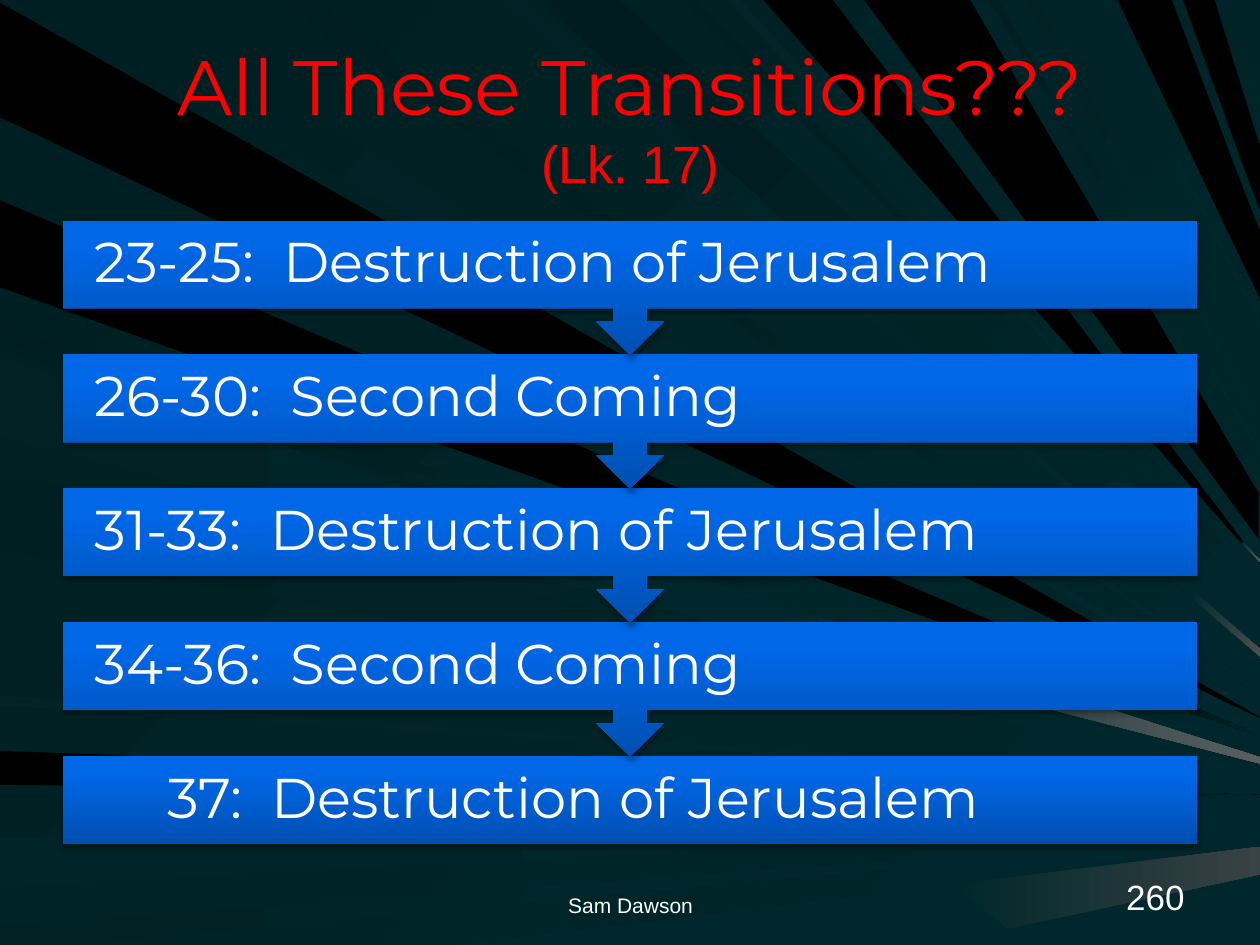
from lxml.etree import SubElement
from pptx import Presentation
from pptx.dml.color import RGBColor as Rgb
from pptx.enum.shapes import MSO_SHAPE as Preset
from pptx.enum.text import MSO_ANCHOR as Anchor, MSO_AUTO_SIZE as AutoSize, PP_ALIGN as Align
from pptx.oxml.ns import qn
from pptx.util import Inches, Pt

COLORS = {
    "black": "000000", "white": "FFFFFF", "red": "FF0000", "pink": "FF9999",
    "teal": "00272B", "teal1": "001C1F", "teal2": "001D1F", "teal3": "001D20",
    "teal4": "001E21", "teal5": "001F22", "teal6": "001F23", "teal7": "002023",
    "teal8": "002125", "teal9": "002225", "teal10": "002327", "teal11": "002427",
    "teal12": "002428", "grey1": "394244", "grey2": "4A5152", "grey3": "5A5F60",
    "navy": "004FB1", "blue": "0067E6",
}

# The grid has 100 columns and 100 rows to the inch.
COLUMNS, ROWS = 1000, 750
UNIT = Inches(1) // 100

# Background rays: colour or (first colour, last colour, angle), then corners on the grid
RAYS = [
    ("black", "556,317 0,2 0,93 529,345 1000,570 1000,569"),
    (("teal6", "teal", 45), "577,298 101,0 26,0 563,310 1000,563 1000,562"),
    ("black", "0,623 701,629 701,621 0,596"),
    (("black", "teal", 0), "1000,632 1000,631 701,621 701,629"),
    (("teal11", "teal", 0), "0,704 831,660 831,647 0,665"),
    ("teal", "1000,651 1000,643 831,647 831,660"),
    ("teal", "1000,662 628,689 628,697"),
    (("teal9", "teal", 0), "0,750 54,750 628,697 628,689 0,735"),
    ("teal", "742,750 801,737 756,702 364,750"),
    (("teal", "grey1", 0), "1000,694 1000,672 756,702 800,737"),
    ("teal", "1000,589 873,547 873,548"),
    (("teal4", "teal", 45), "0,270 873,548 873,547 0,258"),
    (("black", "teal", 0), "1000,585 1000,584 873,529 873,539"),
    ("black", "0,228 873,539 873,529 0,159"),
    (("teal8", "teal", 45), "398,0 944,473 947,469 416,0"),
    (("teal", "grey2", 45), "1000,521 1000,515 947,469 944,473"),
    ("teal", "1000,507 1000,479 968,449 951,465"),
    (("teal1", "teal", 45), "426,0 951,465 968,449 492,0"),
    ("pink", "1000,463 977,440"),
    (("teal3", "teal", 45), "540,0 977,440 552,0"),
    ("black", "606,0 985,431 987,430 661,0"),
    (("teal", "grey3", 45), "1000,446 1000,445 987,430 985,431"),
    ("black", "1000,237 1000,183 986,148 973,181"),
    ("black", "887,0 973,181 986,148 930,0"),
    ("black", "964,0 939,0 989,138 999,113"),
    ("black", "989,138 1000,167 1000,114 999,113"),
    (("teal7", "teal", 45), "0,342 999,602 999,596 0,278"),
    (("teal6", "teal", 45), "0,437 999,606 999,605 0,374"),
    (("teal12", "teal", 0), "0,560 999,623 999,621 0,552"),
    (("teal2", "teal", 45), "225,0 999,552 999,547 247,0"),
    (("teal12", "teal", 45), "577,0 999,454 999,453 588,0"),
    ("black", "770,0 686,0 999,428 999,390 998,390"),
    (("teal5", "teal", 45), "785,0 999,360 999,354 792,0"),
    (("teal9", "teal", 45), "815,0 999,336 999,335 824,0"),
    (("teal10", "teal", 45), "999,249 872,0 865,0 999,258"),
    (("teal9", "teal", 0), "0,283 0,347 633,511 635,498 637,485"),
    (("teal", "grey3", 0), "1000,601 637,485 635,498 633,511 1000,606"),
]

# Passage text and its left indent in columns
PASSAGES = [
    ("23-25:  Destruction of Jerusalem", 0),
    ("26-30:  Second Coming", 0),
    ("31-33:  Destruction of Jerusalem", 0),
    ("34-36:  Second Coming", 0),
    ("37:  Destruction of Jerusalem", 58),
]
PASSAGE_TOP, PASSAGE_STEP = 175, 106.25
BOX_HEIGHT, CALLOUT_HEIGHT = 70, 107


def grid(*lengths):
    return [round(length * UNIT) for length in lengths]


def color(name):
    return Rgb.from_string(COLORS[name])


def paint(fill, look, reach=1):
    """Fill with one colour, or with a clockwise-angled gradient ending at reach."""
    if isinstance(look, str):
        fill.solid()
        fill.fore_color.rgb = color(look)
        return
    first, last, angle = look
    fill.gradient()
    fill.gradient_angle = (360 - angle) % 360
    for stop, name, position in zip(fill.gradient_stops, (first, last), (0, reach)):
        stop.color.rgb = color(name)
        stop.position = position


def add_text(para, text, size=12, font="Arial", tint="white"):
    span = para.add_run()
    span.text = text
    span.font.size = Pt(size)
    span.font.name = font
    span.font.color.rgb = color(tint)


class SlideBuilder:
    def __init__(self, deck, background):
        self.page = deck.slides.add_slide(deck.slide_layouts[5])
        self.shapes = self.page.shapes
        paint(self.page.background.fill, background)

    def ray(self, look, corners):
        start, *others = [tuple(map(int, pair.split(","))) for pair in corners.split()]
        builder = self.shapes.build_freeform(*start, scale=UNIT)
        shape = builder.add_line_segments(others, close=True).convert_to_shape()
        shape.shadow.inherit = False
        shape.line.fill.background()
        paint(shape.fill, look)

    def title(self, area, heading, reference):
        title = self.shapes.title
        title.element.getparent().append(title.element)  # in front of the rays
        title.left, title.top, title.width, title.height = grid(*area)
        frame = title.text_frame
        frame.auto_size = AutoSize.NONE
        frame.vertical_anchor = Anchor.MIDDLE
        para = frame.paragraphs[0]
        para.alignment = Align.CENTER
        add_text(para, heading, size=44, font="Montserrat", tint="red")
        para.add_line_break()
        add_text(para, reference, size=30, tint="red")

    def block(self, preset, area, rotation=0):
        """Add a blue block with a soft shadow; both keep upright when it turns."""
        shape = self.shapes.add_shape(preset, *grid(*area))
        shape.rotation = rotation
        shape.line.fill.background()
        paint(shape.fill, ("navy", "blue", 270), reach=0.8)
        shape.shadow.inherit = False
        properties = shape.element.spPr
        properties.find(qn("a:gradFill")).set("rotWithShape", "0")
        shadow = SubElement(properties.find(qn("a:effectLst")), qn("a:outerShdw"),
                            blurRad=str(Pt(3.1)), dist=str(Pt(1.8)),
                            dir="5400000", rotWithShape="0")
        tint = SubElement(shadow, qn("a:srgbClr"), val=COLORS["black"])
        SubElement(tint, qn("a:alpha"), val="35000")

    def label(self, area, text, align=Align.LEFT, anchor=Anchor.BOTTOM,
              inset=None, indent=0, spacing=None, **style):
        frame = self.shapes.add_textbox(*grid(*area)).text_frame
        frame.word_wrap = True
        frame.vertical_anchor = anchor
        if inset:
            frame.margin_left = frame.margin_right = inset * UNIT
            frame.margin_top = frame.margin_bottom = inset * UNIT
        para = frame.paragraphs[0]
        para.alignment = align
        para.line_spacing = spacing
        if indent:
            para._p.get_or_add_pPr().set("marL", str(indent * UNIT))
        add_text(para, text, **style)

    def passage(self, index, text, indent):
        left, width = COLUMNS * 0.05, COLUMNS * 0.9
        top = PASSAGE_TOP + index * PASSAGE_STEP
        box = (left, top, width, BOX_HEIGHT)
        if index == len(PASSAGES) - 1:
            self.block(Preset.RECTANGLE, box)
        else:
            self.block(Preset.UP_ARROW_CALLOUT, (left, top, width, CALLOUT_HEIGHT), rotation=180)
        self.label(box, text, anchor=Anchor.MIDDLE, inset=25, indent=indent,
                   spacing=0.9, size=32, font="Montserrat")


def main():
    deck = Presentation()
    deck.slide_width, deck.slide_height = grid(COLUMNS, ROWS)
    slide = SlideBuilder(deck, background=("teal5", "teal", 45))
    for look, corners in RAYS:
        slide.ray(look, corners)
    slide.title((50, 30, 900, 125), "All These Transitions???", "(Lk. 17)")
    for index, (text, indent) in reversed(list(enumerate(PASSAGES))):
        slide.passage(index, text, indent)
    slide.label((717, 683, 233, 50), "260", align=Align.RIGHT, size=20)
    slide.label((342, 683, 317, 50), "Sam Dawson", align=Align.CENTER)
    deck.save("out.pptx")


if __name__ == "__main__":
    main()
